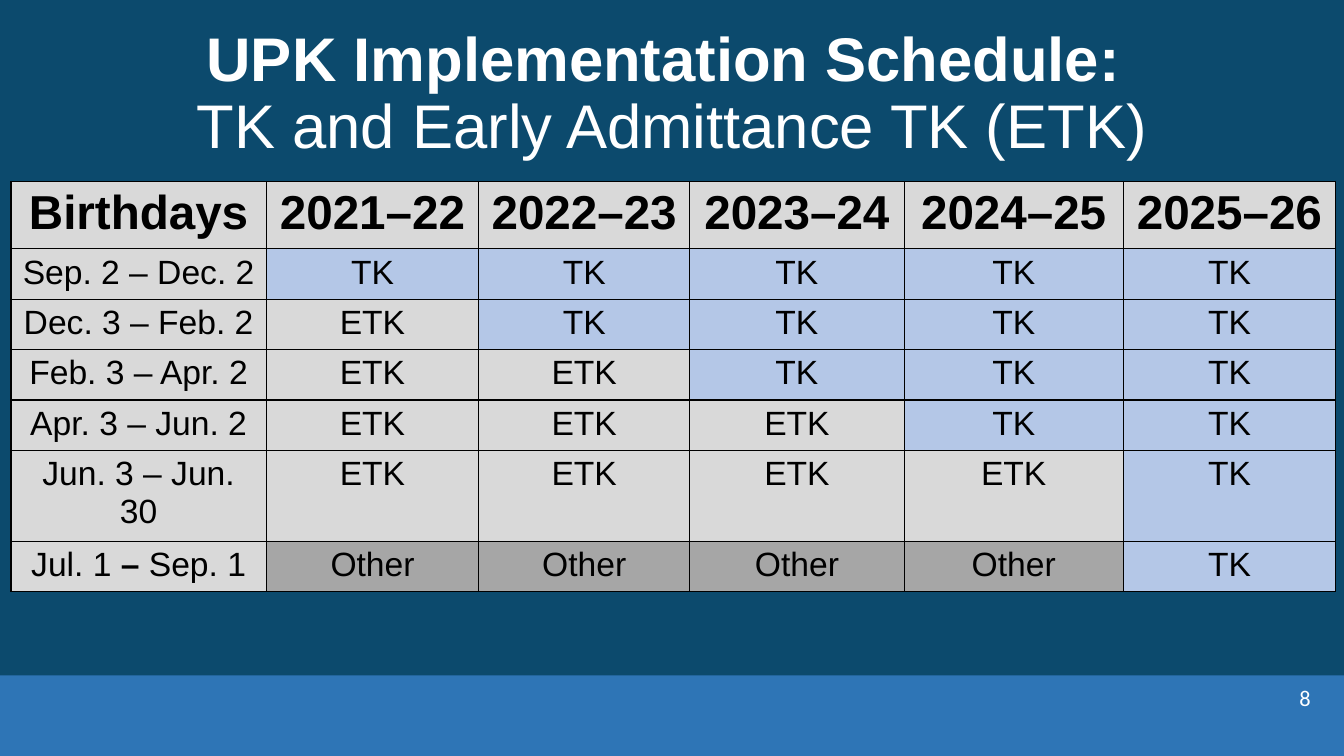
"""Build the UPK implementation schedule slide."""
from lxml.etree import SubElement
from pptx import Presentation
from pptx.dml.color import RGBColor
from pptx.enum.shapes import MSO_SHAPE
from pptx.enum.text import MSO_ANCHOR, MSO_AUTO_SIZE, PP_ALIGN
from pptx.oxml.ns import qn
from pptx.util import Inches, Pt

TITLE = [("UPK Implementation Schedule: ", True), ("TK and Early Admittance TK (ETK)", False)]
YEARS = ["2021–22", "2022–23", "2023–24", "2024–25", "2025–26"]
SCHEDULE = [
    ([("Sep. 2 – Dec. 2", False)], ["TK", "TK", "TK", "TK", "TK"]),
    ([("Dec. 3 – Feb. 2", False)], ["ETK", "TK", "TK", "TK", "TK"]),
    ([("Feb. 3 – Apr. 2", False)], ["ETK", "ETK", "TK", "TK", "TK"]),
    ([("Apr. 3 – Jun. 2", False)], ["ETK", "ETK", "ETK", "TK", "TK"]),
    ([("Jun. 3 – Jun. 30", False)], ["ETK", "ETK", "ETK", "ETK", "TK"]),
    ([("Jul. 1 ", False), ("– ", True), ("Sep. 1", False)],
     ["Other", "Other", "Other", "Other", "TK"]),
]
PAGE_NUMBER = "8"
COLORS = {"background": "0C4A6D", "band": "2E75B6", "white": "FFFFFF", "black": "000000",
          "plain": "D9D9D9", "TK": "B4C7E7", "Other": "A6A6A6"}
WIDTH, HEIGHT, BAND_HEIGHT = 13.33, 7.5, 0.8
COLUMNS = [2.53, 2.11, 2.09, 2.13, 2.17, 2.11]
ROW_HEIGHT = 0.41


def color(name):
    return RGBColor.from_string(COLORS[name])


def box(left, top, width, height):
    return [Inches(value) for value in (left, top, width, height)]


def add_run(paragraph, text, size, color_name, bold=False, font="Arial"):
    run = paragraph.add_run()
    run.text = text
    run.font.name, run.font.size, run.font.bold = font, Pt(size), bold
    run.font.color.rgb = color(color_name)


def add_borders(cell):
    properties = cell._tc.get_or_add_tcPr()
    for side in ("lnL", "lnR", "lnT", "lnB"):
        line = SubElement(properties, qn(f"a:{side}"), w=str(Pt(1)))
        fill = SubElement(line, qn("a:solidFill"))
        SubElement(fill, qn("a:srgbClr"), val=COLORS["black"])


def add_band(slide):
    band = slide.shapes.add_shape(
        MSO_SHAPE.RECTANGLE, *box(0, HEIGHT - BAND_HEIGHT, WIDTH, BAND_HEIGHT))
    band.shadow.inherit = False
    band.fill.solid()
    band.fill.fore_color.rgb = color("band")
    band.line.fill.background()


def add_title(slide):
    title = slide.shapes.title
    title.left, title.top, title.width, title.height = box(0.17, 0.22, 13, 1.45)
    frame = title.text_frame
    frame.auto_size = MSO_AUTO_SIZE.NONE
    frame.vertical_anchor = MSO_ANCHOR.MIDDLE
    paragraph = frame.paragraphs[0]
    paragraph.alignment, paragraph.line_spacing = PP_ALIGN.CENTER, 0.9
    for index, (text, bold) in enumerate(TITLE):
        if index:
            paragraph.add_line_break()
        add_run(paragraph, text, 44, "white", bold)


def add_page_number(slide):
    frame = slide.shapes.add_textbox(*box(12.01, 6.75, 0.99, 0.3)).text_frame
    frame.word_wrap = True
    frame.vertical_anchor = MSO_ANCHOR.BOTTOM
    frame.margin_left = frame.margin_right = frame.margin_top = frame.margin_bottom = 0
    paragraph = frame.paragraphs[0]
    paragraph.alignment = PP_ALIGN.RIGHT
    add_run(paragraph, PAGE_NUMBER, 16, "white", font="Calibri")


def add_schedule(slide):
    header = [[(text, True)] for text in ["Birthdays", *YEARS]]
    rows = [header] + [[birthdays] + [[(status, False)] for status in statuses]
                       for birthdays, statuses in SCHEDULE]
    frame = slide.shapes.add_table(
        len(rows), len(COLUMNS), *box(0.11, 1.8, sum(COLUMNS), ROW_HEIGHT * len(rows)))
    table = frame.table
    for column, width in zip(table.columns, COLUMNS):
        column.width = Inches(width)
    for row_index, row in enumerate(rows):
        table.rows[row_index].height = Inches(ROW_HEIGHT)
        for column_index, runs in enumerate(row):
            cell = table.cell(row_index, column_index)
            add_borders(cell)
            status = runs[0][0]
            cell.fill.solid()
            cell.fill.fore_color.rgb = color(status if status in COLORS else "plain")
            paragraph = cell.text_frame.paragraphs[0]
            paragraph.alignment = PP_ALIGN.CENTER
            for text, bold in runs:
                add_run(paragraph, text, 24 if row_index else 34, "black", bold)


def main():
    presentation = Presentation()
    presentation.slide_width, presentation.slide_height = Inches(WIDTH), Inches(HEIGHT)
    slide = presentation.slides.add_slide(presentation.slide_layouts[5])
    slide.background.fill.solid()
    slide.background.fill.fore_color.rgb = color("background")
    add_band(slide)
    add_title(slide)
    add_page_number(slide)
    add_schedule(slide)
    presentation.save("out.pptx")


if __name__ == "__main__":
    main()
